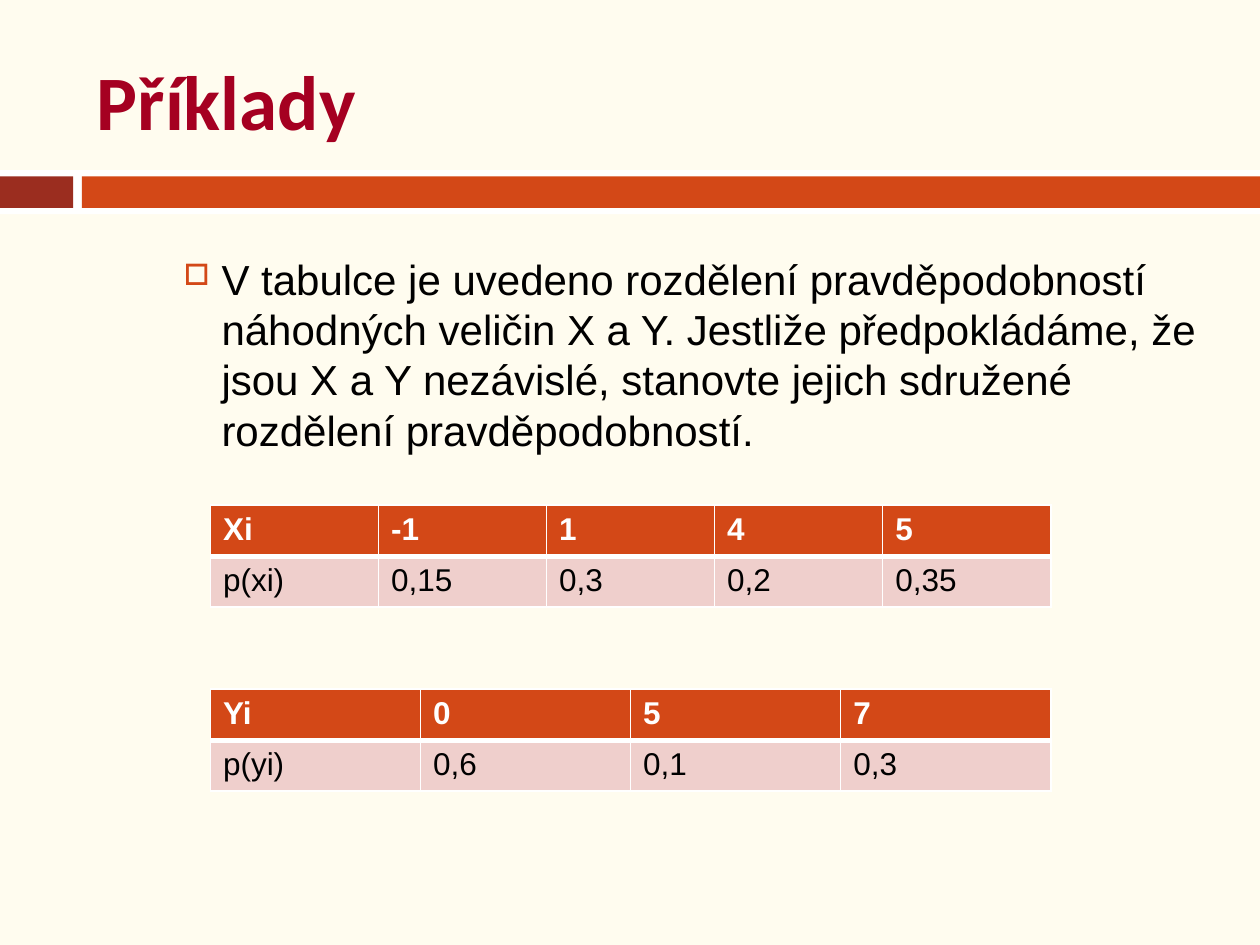
from lxml.etree import SubElement as Sub
from pptx import Presentation
from pptx.dml.color import RGBColor as RGB
from pptx.enum.shapes import MSO_SHAPE as Shape
from pptx.enum.text import MSO_ANCHOR as Anchor
from pptx.oxml.ns import qn
from pptx.util import Inches, Pt

COLORS = {
    "cream": "FFFCEF", "white": "FFFFFF", "brown": "9B2D1F",
    "orange": "D34817", "pink": "EFCFCC", "red": "A50021", "black": "000000",
}


def style(para, size, color, font="Arial", bold=False):
    for run in para.runs:
        run.font.name = font
        run.font.size = Pt(size)
        run.font.bold = bold
        run.font.color.rgb = RGB.from_string(COLORS[color])


def border(cell, side, width):
    line = Sub(cell._tc.get_or_add_tcPr(), qn(f"a:ln{side}"), w=str(Pt(width)))
    fill = Sub(line, qn("a:solidFill"))
    Sub(fill, qn("a:srgbClr"), val=COLORS["white"])


prs = Presentation()
prs.slide_width, prs.slide_height = Inches(10), Inches(7.5)
slide = prs.slides.add_slide(prs.slide_layouts[6])
slide.background.fill.solid()
slide.background.fill.fore_color.rgb = RGB.from_string(COLORS["cream"])

# Band under the title
bars = [(0, 1.35, 10, 0.35, "white"),
        (0, 1.4, 0.58, 0.25, "brown"),
        (0.65, 1.4, 9.35, 0.25, "orange")]
for *box, color in bars:
    bar = slide.shapes.add_shape(Shape.RECTANGLE, *map(Inches, box))
    bar.shadow.inherit = False
    bar.fill.solid()
    bar.fill.fore_color.rgb = RGB.from_string(COLORS[color])
    bar.line.fill.background()

# Title
title = slide.shapes.add_textbox(*map(Inches, (0.67, 0.25, 8.92, 1.08))).text_frame
title.word_wrap = True
title.vertical_anchor = Anchor.MIDDLE
title.text = "Příklady"
style(title.paragraphs[0], 44, "red", "Calibri", True)

# Bulleted task
body = slide.shapes.add_textbox(*map(Inches, (0.96, 1.96, 9.08, 4.92))).text_frame
body.word_wrap = True
body.text = ("V tabulce je uvedeno rozdělení pravděpodobností náhodných veličin X a Y. "
             "Jestliže předpokládáme, že jsou X a Y nezávislé, stanovte jejich "
             "sdružené rozdělení pravděpodobností.")
task = body.paragraphs[0]
task.space_before = Pt(5.5)
style(task, 24, "black")
props = task._p.get_or_add_pPr()
props.set("marL", str(Inches(0.7)))
props.set("indent", str(Inches(-0.3)))
Sub(Sub(props, qn("a:buClr")), qn("a:srgbClr"), val=COLORS["orange"])
Sub(props, qn("a:buSzPct"), val="70000")
Sub(props, qn("a:buChar"), char="□")

# Probability tables
tables = [
    (4.01, [["Xi", "-1", "1", "4", "5"], ["p(xi)", "0,15", "0,3", "0,2", "0,35"]]),
    (5.47, [["Yi", "0", "5", "7"], ["p(yi)", "0,6", "0,1", "0,3"]]),
]
for top, rows in tables:
    count = len(rows[0])
    frame = slide.shapes.add_table(2, count, Inches(1.67), Inches(top),
                                   Inches(6.67), Inches(0.81))
    table = frame.table
    for r, row in enumerate(rows):
        head = r == 0
        for c, text in enumerate(row):
            cell = table.cell(r, c)
            cell.text = text
            style(cell.text_frame.paragraphs[0], 18,
                  "white" if head else "black", bold=head)
            for side in "LRTB":
                thick = side == ("B" if head else "T")
                border(cell, side, 3 if thick else 1)
            cell.fill.solid()
            cell.fill.fore_color.rgb = RGB.from_string(
                COLORS["orange" if head else "pink"])

prs.save("out.pptx")
